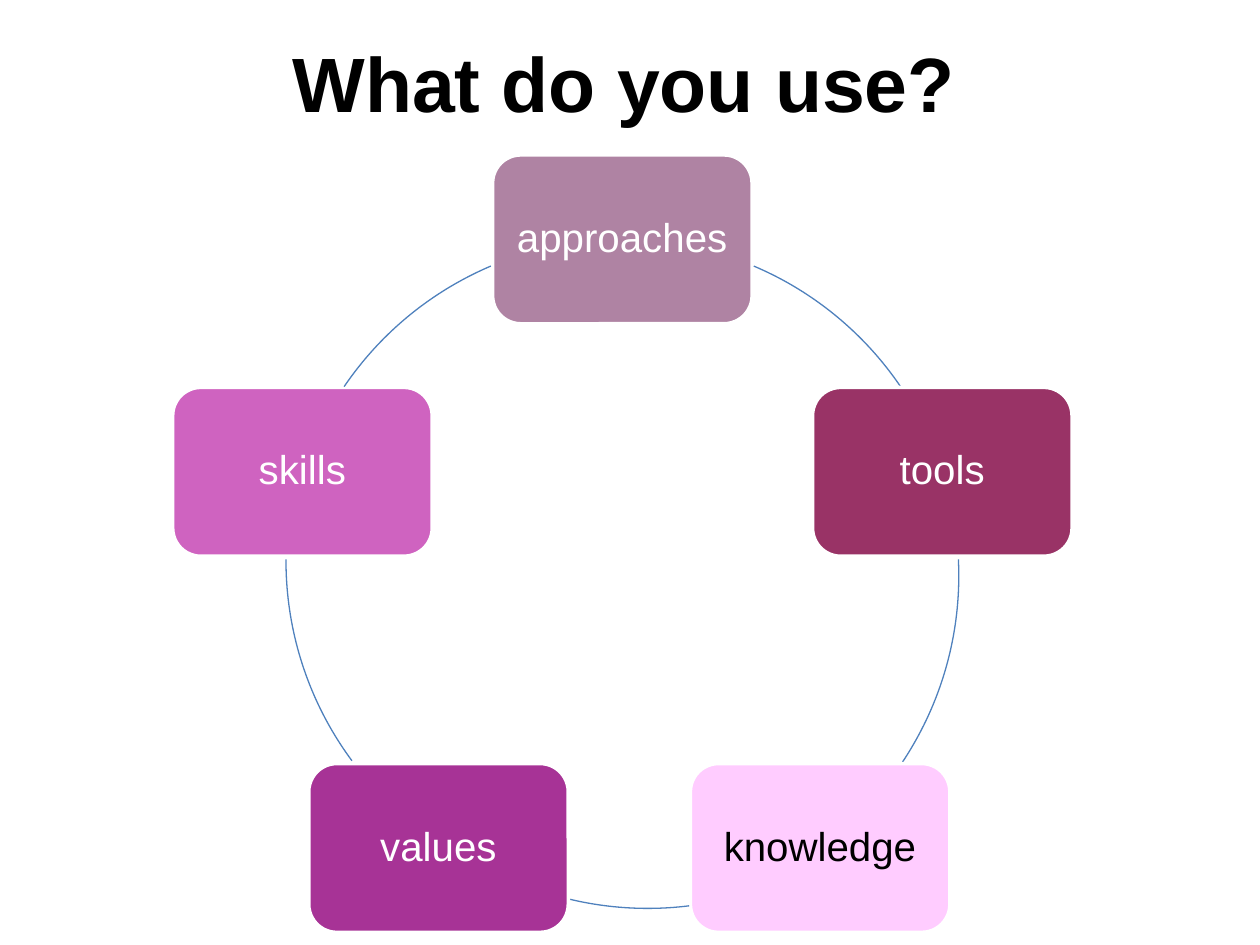
from dataclasses import dataclass
from math import cos, radians, sin

from pptx import Presentation
from pptx.dml.color import RGBColor
from pptx.enum.shapes import MSO_SHAPE as Shape
from pptx.enum.text import MSO_ANCHOR as Anchor, PP_ALIGN as Align
from pptx.util import Inches, Pt


@dataclass(frozen=True)
class Theme:
    font: str = "Arial"
    title_size: int = 44
    node_size: int = 23
    dark: str = "000000"
    light: str = "FFFFFF"
    ring: str = "4F81BD"


class CycleSlide:
    """Holds the theme and the slide being built."""

    def __init__(self, slide, theme):
        self.slide = slide
        self.theme = theme

    def set_text(self, tf, text, size, color, bold=False):
        tf.text = text
        tf.word_wrap = True
        tf.vertical_anchor = Anchor.MIDDLE
        p = tf.paragraphs[0]
        p.alignment = Align.CENTER
        p.font.name = self.theme.font
        p.font.size = Pt(size)
        p.font.bold = bold
        p.font.color.rgb = RGBColor.from_string(color)
        return p

    def title(self, text, left, top, width, height):
        sp = self.slide.shapes.title
        sp.left, sp.top = Inches(left), Inches(top)
        sp.width, sp.height = Inches(width), Inches(height)
        self.set_text(sp.text_frame, text, self.theme.title_size, self.theme.dark, True)

    def outlined(self, kind, cx, cy, width, height, line, weight):
        sp = self.slide.shapes.add_shape(
            kind, Inches(cx - width / 2), Inches(cy - height / 2),
            Inches(width), Inches(height))
        sp.shadow.inherit = False
        sp.line.color.rgb = RGBColor.from_string(line)
        sp.line.width = Pt(weight)
        return sp

    def node(self, text, cx, cy, fill, color):
        sp = self.outlined(Shape.ROUNDED_RECTANGLE, cx, cy, 2.06, 1.34,
                           self.theme.light, 2)
        sp.fill.solid()
        sp.fill.fore_color.rgb = RGBColor.from_string(fill)
        tf = sp.text_frame
        tf.margin_left = tf.margin_right = Inches(0.1)
        tf.margin_top = tf.margin_bottom = Inches(0.1)
        self.set_text(tf, text, self.theme.node_size, color).line_spacing = 0.9

    def arc(self, cx, cy, radius, start, end):
        """Draw clockwise between two angles in degrees, 0 pointing right."""
        sp = self.outlined(Shape.ARC, cx, cy, 2 * radius, 2 * radius,
                           self.theme.ring, 0.75)
        sp.fill.background()
        # Angles are stored in 60000ths of a degree, adjustments in 100000ths
        sp.adjustments[0] = start * 0.6
        sp.adjustments[1] = end * 0.6


def main():
    prs = Presentation()
    prs.slide_width, prs.slide_height = Inches(10), Inches(7.5)
    theme = Theme()
    s = CycleSlide(prs.slides.add_slide(prs.slide_layouts[5]), theme)
    s.title("What do you use?", 0.5, 0.3, 8.91, 0.69)

    # Ring: five nodes at equal angles, clockwise from the top
    cx, cy, radius = 4.94, 4.57, 2.67
    # text, fill, text colour, sideways shift
    nodes = [
        ("approaches", "AF83A3", theme.light, 0),
        ("tools", "993366", theme.light, 0),
        ("knowledge", "FFCCFF", theme.dark, 0),
        ("values", "A73396", theme.light, 0.11),
        ("skills", "CF63C0", theme.light, 0),
    ]
    # start angle, end angle, shift of the circle's centre
    arcs = [
        (293, 325.8, 0, 0),
        (357.2, 33.6, 0, 0),
        (82.9, 103.4, 0.2, -0.03),
        (143.5, 180.2, 0, -0.12),
        (214.2, 247, 0, 0),
    ]
    for i, ((text, fill, color, shift), (start, end, dx, dy)) in enumerate(zip(nodes, arcs)):
        angle = radians(i * 360 / len(nodes) - 90)
        s.node(text, cx + radius * cos(angle) + shift, cy + radius * sin(angle),
               fill, color)
        s.arc(cx + dx, cy + dy, radius, start, end)

    prs.save("out.pptx")


if __name__ == "__main__":
    main()
